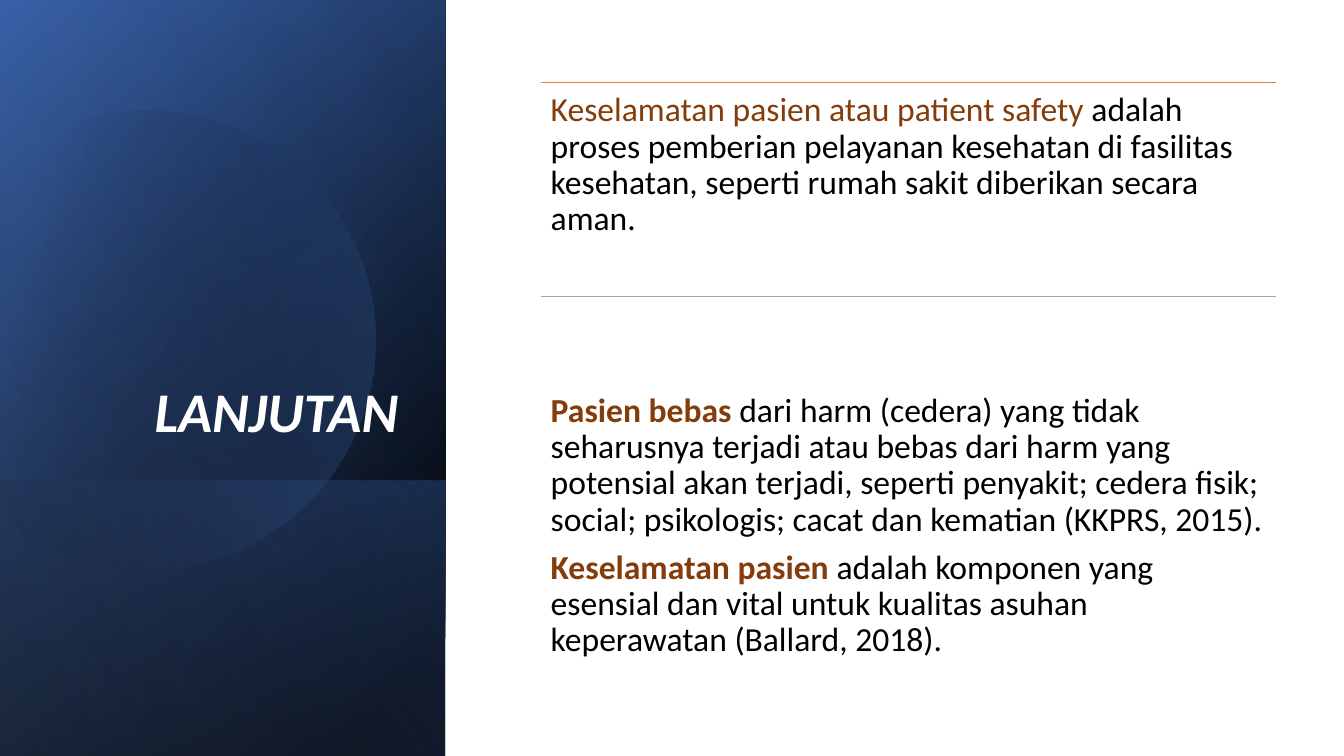
"""Builds the LANJUTAN slide: a blue side panel and two blocks of text."""
from dataclasses import dataclass
from itertools import pairwise
from math import cos, radians, sin, tan

from lxml.etree import SubElement
from pptx import Presentation
from pptx.dml.color import RGBColor
from pptx.enum.shapes import MSO_CONNECTOR as Conn, MSO_SHAPE as Kind
from pptx.enum.text import MSO_ANCHOR as Anchor, PP_ALIGN as Align
from pptx.oxml.ns import qn
from pptx.util import Pt

BLACK = RGBColor(0x00, 0x00, 0x00)
WHITE = RGBColor(0xFF, 0xFF, 0xFF)
NAVY = RGBColor(0x2F, 0x55, 0x97)
BLUE = RGBColor(0x44, 0x72, 0xC4)
PALE = RGBColor(0x8F, 0xAA, 0xDC)
BROWN = RGBColor(0x84, 0x3C, 0x0B)
ORANGE = RGBColor(0xED, 0x7D, 0x31)
GREY = RGBColor(0xA5, 0xA5, 0xA5)

FONT = "Calibri"
LEFT, RIGHT = 386.3, 911.3
FULL = (-110.9, 110.9, 540, 318.2)
FOOT = (60.5, 282.5, 197.3, 318.2)


@dataclass
class Stop:
    pos: int
    color: RGBColor
    alpha: int = 100


@dataclass
class Panel:
    box: tuple[float, float, float, float]
    angle: int
    stops: list[Stop]


@dataclass
class Run:
    text: str
    color: RGBColor = BLACK
    bold: bool = False
    size: int = 24
    italic: bool = False


@dataclass
class Block:
    box: tuple[float, float, float, float]
    paras: list[list[Run]]
    frame: dict
    para: dict


@dataclass
class Rule:
    top: float
    color: RGBColor


BACK = [
    Panel(FULL, 50, [Stop(8, BLACK), Stop(100, NAVY)]),
    Panel(FULL, 30, [Stop(0, BLACK, 0), Stop(99, BLUE, 46)]),
    Panel(FOOT, 130, [Stop(2, BLUE, 29), Stop(100, BLACK, 30)]),
]
DISC = [Stop(29, BLACK, 0), Stop(100, BLUE, 43)]
GLOSS = Panel(FULL, 120, [Stop(0, BLACK, 0), Stop(99, PALE, 11)])
RULES = [Rule(58.9, ORANGE), Rule(211.7, GREY)]

INSET = {f"margin_{side}": Pt(7.2) for side in ("left", "top", "right", "bottom")}
BODY = {"line_spacing": 0.9, "space_after": Pt(8.4)}
BLOCKS = [
    Block((46.1, 132.5, 245.5, 188.6),
          [[Run("LANJUTAN", WHITE, True, 40, True)]],
          {"vertical_anchor": Anchor.BOTTOM},
          {"line_spacing": 0.9, "alignment": Align.RIGHT}),
    Block((LEFT, 59.2, RIGHT - LEFT, 214.6),
          [[Run("Keselamatan pasien atau patient safety ", BROWN),
            Run("adalah proses pemberian pelayanan kesehatan di fasilitas "
                "kesehatan, seperti rumah sakit diberikan secara aman.")]],
          INSET, BODY),
    Block((LEFT, 273.8, RIGHT - LEFT, 214.6),
          [[Run("Pasien bebas ", BROWN, True),
            Run("dari harm (cedera) yang tidak seharusnya terjadi atau bebas "
                "dari harm yang potensial akan terjadi, seperti penyakit; "
                "cedera fisik; social; psikologis; cacat dan kematian "
                "(KKPRS, 2015).")],
           [Run("Keselamatan pasien ", BROWN, True),
            Run("adalah komponen yang esensial dan vital untuk kualitas "
                "asuhan keperawatan (Ballard, 2018).")]],
          INSET, BODY),
]


def apply(item, values: dict) -> None:
    for name, value in values.items():
        setattr(item, name, value)


def shade(shape, angle: int, stops: list[Stop]) -> None:
    shape.shadow.inherit = False
    shape.line.fill.background()
    props = shape.element.spPr
    grad = SubElement(props, qn("a:gradFill"), rotWithShape="1")
    items = SubElement(grad, qn("a:gsLst"))
    for stop in stops:
        mark = SubElement(items, qn("a:gs"), pos=str(stop.pos * 1000))
        tint = SubElement(mark, qn("a:srgbClr"), val=str(stop.color))
        SubElement(tint, qn("a:alpha"), val=str(stop.alpha * 1000))
    SubElement(grad, qn("a:lin"), ang=str(angle * 60000), scaled="0")
    props.insert(2, grad)


def add_panel(slide, panel: Panel) -> None:
    shape = slide.shapes.add_shape(Kind.RECTANGLE, *map(Pt, panel.box))
    shape.rotation = 90
    shape.element.spPr.xfrm.set("flipH", "1")
    shade(shape, panel.angle, panel.stops)


def spot(turn: float, pull: float = 0) -> tuple[Pt, Pt]:
    mid_x, mid_y, size = 103.3, 239.8, 164.2
    col, row = cos(radians(turn)), sin(radians(turn))
    return Pt(mid_x + size * (col - pull * row)), Pt(mid_y + size * (row + pull * col))


def add_disc(slide) -> None:
    turns = (-118, -90, 0, 90, 150)
    nodes = []
    for start, end in pairwise(turns):
        pull = 4 / 3 * tan(radians(end - start) / 4)
        nodes += [spot(start, pull), spot(end, -pull), spot(end)]
    pen = slide.shapes.build_freeform(*spot(turns[0]))
    pen.add_line_segments(nodes, close=True)
    shape = pen.convert_to_shape()
    lines = list(shape.element.iter(qn("a:lnTo")))
    for index in range(0, len(nodes), 3):
        first, *rest = lines[index:index + 3]
        curve = first.makeelement(qn("a:cubicBezTo"))
        first.addprevious(curve)
        for line in (first, *rest):
            curve.append(line[0])
            line.getparent().remove(line)
    shape.rotation = 343.9
    shade(shape, 30, DISC)


def add_rule(slide, rule: Rule) -> None:
    line = slide.shapes.add_connector(
        Conn.STRAIGHT, Pt(LEFT), Pt(rule.top), Pt(RIGHT), Pt(rule.top))
    line.line.width = Pt(0.5)
    line.line.color.rgb = rule.color
    SubElement(line.element.spPr, qn("a:effectLst"))


def add_block(slide, block: Block) -> None:
    frame = slide.shapes.add_textbox(*map(Pt, block.box)).text_frame
    apply(frame, {"word_wrap": True} | block.frame)
    for index, runs in enumerate(block.paras):
        para = frame.add_paragraph() if index else frame.paragraphs[0]
        apply(para, block.para)
        for run in runs:
            part = para.add_run()
            part.text = run.text
            apply(part.font, {"name": FONT, "size": Pt(run.size),
                              "bold": run.bold, "italic": run.italic})
            part.font.color.rgb = run.color


def main() -> None:
    deck = Presentation()
    apply(deck, {"slide_width": Pt(960), "slide_height": Pt(540)})
    slide = deck.slides.add_slide(deck.slide_layouts[6])
    for panel in BACK:
        add_panel(slide, panel)
    add_disc(slide)
    add_panel(slide, GLOSS)
    for rule in RULES:
        add_rule(slide, rule)
    for block in BLOCKS:
        add_block(slide, block)
    deck.save("out.pptx")


if __name__ == "__main__":
    main()
